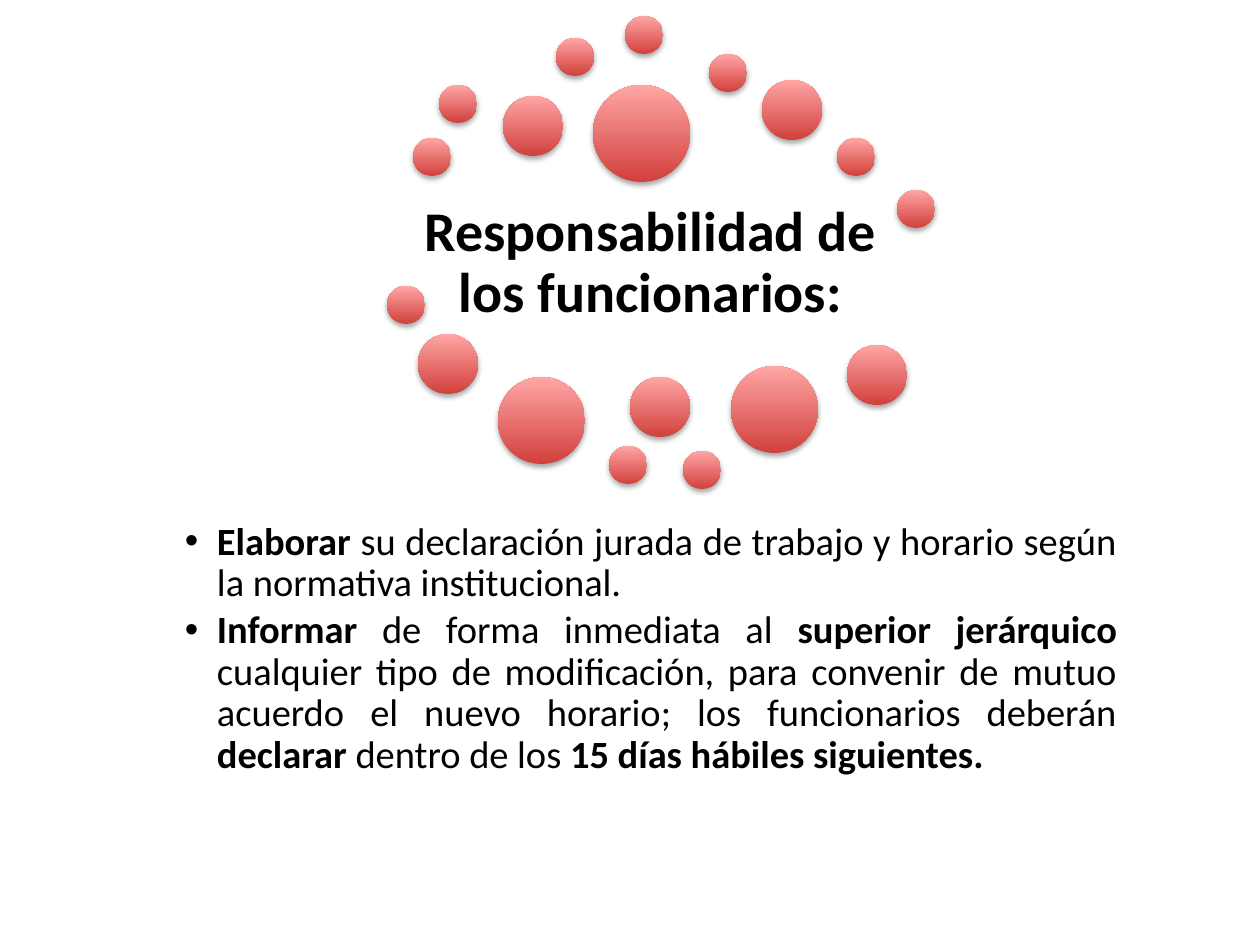
"""Build a slide on officials' responsibilities with a ring of circles around its title."""
from lxml.etree import SubElement
from pptx import Presentation
from pptx.dml.color import RGBColor
from pptx.enum.shapes import MSO_SHAPE as Shape
from pptx.enum.text import MSO_ANCHOR as Anchor, PP_ALIGN as Align
from pptx.oxml.ns import qn
from pptx.util import Emu, Pt

BLACK = RGBColor(0x00, 0x00, 0x00)
DARK_RED = RGBColor(0xD1, 0x40, 0x3C)
LIGHT_RED = RGBColor(0xFF, 0xA6, 0xA5)
SCALE = 914400 / 126


def px(length):
    return Emu(round(length * SCALE))


def add_text(paragraphs, box, size, align, anchor=Anchor.TOP, after=0, bullet=None):
    frame = slide.shapes.add_textbox(*map(px, box)).text_frame
    frame.word_wrap = True
    frame.vertical_anchor = anchor
    frame.margin_left = frame.margin_right = px(5)
    frame.margin_top = frame.margin_bottom = px(5)
    for index, runs in enumerate(paragraphs):
        paragraph = frame.add_paragraph() if index else frame.paragraphs[0]
        if bullet:
            properties = paragraph._p.get_or_add_pPr()
            properties.set("marL", str(px(32)))
            properties.set("indent", str(px(-32)))
            SubElement(properties, qn("a:buFont"), typeface="Arial")
            SubElement(properties, qn("a:buChar"), char=bullet)
        paragraph.alignment = align
        paragraph.line_spacing = 0.9
        paragraph.space_after = Pt(after)
        for text, bold in runs:
            run = paragraph.add_run()
            run.text = text
            run.font.name = "Calibri"
            run.font.size = Pt(size)
            run.font.bold = bold
            run.font.color.rgb = BLACK


presentation = Presentation()
presentation.slide_width = px(1260)
presentation.slide_height = px(945)
slide = presentation.slides.add_slide(presentation.slide_layouts[6])

add_text([[("Responsabilidad de los funcionarios:", True)]], (413, 186, 475, 156),
         size=32, align=Align.CENTER, anchor=Anchor.MIDDLE, after=11)

duties = [
    [("Elaborar ", True),
     ("su declaración jurada de trabajo y horario según la normativa institucional.", False)],
    [("Informar", True),
     (" de forma inmediata al ", False),
     ("superior jerárquico ", True),
     ("cualquier tipo de modificación, para convenir de mutuo acuerdo el nuevo horario; "
      "los funcionarios deberán ", False),
     ("declarar ", True),
     ("dentro de los ", False),
     ("15 días hábiles siguientes.", True)],
]
add_text(duties, (180, 517, 942, 294), size=22, align=Align.JUSTIFY, after=3, bullet="•")

circles_by_diameter = {
    38: [(413, 138), (439, 85), (556, 38), (625, 16), (709, 54), (837, 138),
         (897, 190), (387, 286), (609, 446), (683, 451)],
    60: [(503, 96), (762, 80), (418, 334), (630, 377), (847, 345)],
    87: [(498, 377), (731, 366)],
    97: [(593, 85)],
}
for diameter, corners in circles_by_diameter.items():
    for left, top in corners:
        circle = slide.shapes.add_shape(
            Shape.OVAL, px(left), px(top), px(diameter), px(diameter))
        circle.fill.gradient()
        circle.fill.gradient_angle = 90
        for stop, color in zip(circle.fill.gradient_stops, (DARK_RED, LIGHT_RED)):
            stop.color.rgb = color
        circle.line.fill.background()
        circle.shadow.inherit = False
        effects = circle._element.spPr.find(qn("a:effectLst"))
        shadow = SubElement(effects, qn("a:outerShdw"), blurRad=str(Pt(3.1)),
                            dist=str(Pt(1.8)), dir="5400000", rotWithShape="0")
        shadow_color = SubElement(shadow, qn("a:srgbClr"), val=str(BLACK))
        SubElement(shadow_color, qn("a:alpha"), val="35000")

presentation.save("out.pptx")
